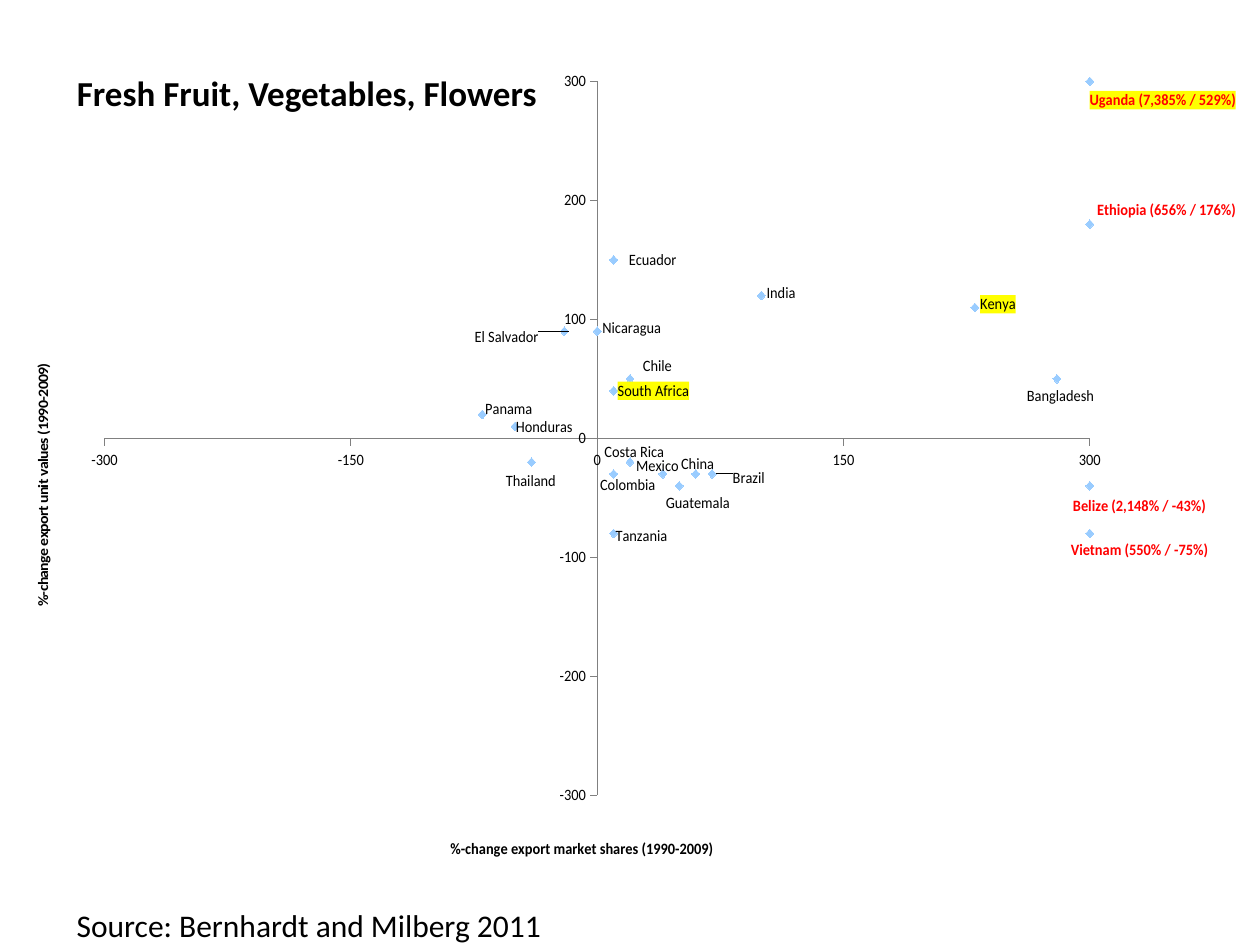
from lxml import etree
from pptx import Presentation
from pptx.chart.data import XyChartData
from pptx.dml.color import RGBColor
from pptx.enum import chart as ch, text as tx
from pptx.oxml import parse_xml
from pptx.oxml.ns import qn
from pptx.util import Inches, Pt

BLACK = RGBColor(0, 0, 0)
GRAY = RGBColor(0x80, 0x80, 0x80)
RED = RGBColor(0xFF, 0, 0)
SKY = RGBColor(0x99, 0xCC, 0xFF)
YELLOW = RGBColor(0xFF, 0xFF, 0)
FONT = "Calibri"
C15 = "http://schemas.microsoft.com/office/drawing/2012/chart"
LEADER = "{CE6537A1-D6FC-4f65-9D91-7224C49458BB}"

POINTS = [
    ("Bangladesh", 280, 50, -3.5, 2.2),
    ("Chile", 20, 50, 0.4, -1.5),
    ("Ecuador", 10, 150, 0.6, 0),
    ("Ethiopia (656% / 176%)", 300, 180, -0.1, -1.7),
    ("India", 100, 120, -0.3, -0.3),
    ("Kenya", 230, 110, -0.3, -0.4),
    ("South Africa", 10, 40, -0.4, 0),
    ("Uganda (7,385% / 529%)", 300, 300, -0.8, 2.3),
    ("Thailand", -40, -20, -3.1, 2.3),
    ("Belize (2,148% / -43%)", 300, -40, -2.3, 2.5),
    ("Brazil", 70, -30, 1.1, 0.5),
    ("China", 60, -30, -2.1, -1.2),
    ("Colombia", 10, -30, -2, 1.4),
    ("Costa Rica", 20, -20, -3.1, -1.2),
    ("El Salvador", -20, 90, -8.9, 0.7),
    ("Guatemala", 50, -40, -2, 2.1),
    ("Honduras", -50, 10, -0.7, 0.1),
    ("Mexico", 40, -30, -3.2, -1),
    ("Nicaragua", 0, 90, -0.3, -0.4),
    ("Panama", -70, 20, -0.5, -0.6),
    ("Tanzania", 10, -80, -0.6, 0.4),
    ("Vietnam (550% / -75%)", 300, -80, -2.5, 2.1),
]
MARKED = ("Kenya", "South Africa", "Uganda (7,385% / 529%)")


def add_run(para, words, size, bold=False, color=BLACK):
    run = para.add_run()
    run.text = words
    font = run.font
    font.size, font.bold, font.name = Pt(size), bold, FONT
    font.color.rgb = color


def layout(**parts):
    node = etree.Element(qn("c:layout"))
    man = etree.SubElement(node, qn("c:manualLayout"))
    for tag, val in parts.items():
        etree.SubElement(man, qn("c:" + tag), val=str(val))
    return parse_xml(etree.tostring(node))


def place(owner, node):
    for old in owner.findall(qn("c:layout")):
        owner.remove(old)
    prior = owner.find(qn("c:tx"))
    if prior is None:
        owner.insert(0, node)
    else:
        prior.addnext(node)


def style_axis(axis, step, title, left, top):
    axis.minimum_scale, axis.maximum_scale = -300, 300
    axis.major_unit = step
    axis.has_major_gridlines = False
    axis.major_tick_mark = ch.XL_TICK_MARK.OUTSIDE
    axis.minor_tick_mark = ch.XL_TICK_MARK.NONE
    axis.tick_label_position = ch.XL_TICK_LABEL_POSITION.NEXT_TO_AXIS
    axis.tick_labels.number_format = "0"
    axis.tick_labels.number_format_is_linked = False
    font = axis.tick_labels.font
    font.size, font.name = Pt(9), FONT
    font.color.rgb = BLACK
    axis.format.line.color.rgb = GRAY
    axis.format.line.width = Pt(0.75)
    head = axis.axis_title
    add_run(head.text_frame.paragraphs[0], title, 9, True)
    place(head._element, layout(xMode="edge", yMode="edge",
                                x=left / 100, y=top / 100))


def add_label(point, name, right, down):
    label = point.data_label
    color = RED if "%" in name else BLACK
    add_run(label.text_frame.paragraphs[0], name, 9, color == RED, color)
    label.position = ch.XL_LABEL_POSITION.RIGHT
    node = label._dLbl
    if right or down:
        node.find(qn("c:idx")).addnext(layout(x=right / 100, y=down / 100))
    if name in MARKED:
        fill = etree.Element(qn("c:spPr"))
        solid = etree.SubElement(fill, qn("a:solidFill"))
        etree.SubElement(solid, qn("a:srgbClr"), val=str(YELLOW))
        node.find(qn("c:tx")).addnext(fill)


def add_leaders(labels):
    exts = etree.SubElement(labels, qn("c:extLst"))
    ext = etree.SubElement(exts, qn("c:ext"), uri=LEADER, nsmap={"c15": C15})
    etree.SubElement(ext, "{%s}showLeaderLines" % C15, val="1")


def draw_chart(slide, *box):
    data = XyChartData()
    rows = data.add_series("Series 1")
    for name, share, value, right, down in POINTS:
        rows.add_data_point(share, value)
    frame = slide.shapes.add_chart(ch.XL_CHART_TYPE.XY_SCATTER,
                                   *map(Inches, box), data)
    chart = frame.chart
    chart.has_title = chart.has_legend = False
    chart.font.size, chart.font.name = Pt(10), FONT
    chart.font.color.rgb = BLACK
    style_axis(chart.category_axis, 150,
               "%-change export market shares (1990-2009)", 38.3, 95.8)
    style_axis(chart.value_axis, 100,
               "%-change export unit values (1990-2009)", 0.5, 34.6)
    plot = chart.plots[0]
    plot.vary_by_categories = False
    place(plot._element.getparent(),
          layout(layoutTarget="inner", xMode="edge", yMode="edge",
                 x=0.072, y=0.032, w=0.893, h=0.877))
    series = plot.series[0]
    series.format.line.fill.background()
    mark = series.marker
    mark.style, mark.size = ch.XL_MARKER_STYLE.DIAMOND, 5
    mark.format.fill.solid()
    mark.format.fill.fore_color.rgb = SKY
    mark.format.line.color.rgb = SKY
    for i, (name, share, value, right, down) in enumerate(POINTS):
        add_label(series.points[i], name, right, down)
    add_leaders(series._element.find(qn("c:dLbls")))


def write(shape, words, size, bold, *box):
    shape.left, shape.top, shape.width, shape.height = map(Inches, box)
    frame = shape.text_frame
    frame.word_wrap = True
    frame.auto_size = tx.MSO_AUTO_SIZE.NONE
    frame.vertical_anchor = tx.MSO_ANCHOR.TOP
    para = frame.paragraphs[0]
    para.alignment = tx.PP_ALIGN.LEFT
    add_run(para, words, size, bold)


def main():
    deck = Presentation()
    deck.slide_width, deck.slide_height = Inches(10), Inches(7.5)
    slide = deck.slides.add_slide(deck.slide_layouts[5])
    draw_chart(slide, 0.2, 0.44, 9.61, 6.46)
    note = slide.shapes.add_textbox(0, 0, 0, 0)
    write(note, "Source: Bernhardt and Milberg 2011", 18, False,
          0.51, 7.14, 4.25, 0.4)
    write(slide.shapes.title, "Fresh Fruit, Vegetables, Flowers", 20, True,
          0.51, 0.52, 4.25, 0.44)
    deck.save("out.pptx")


if __name__ == "__main__":
    main()
